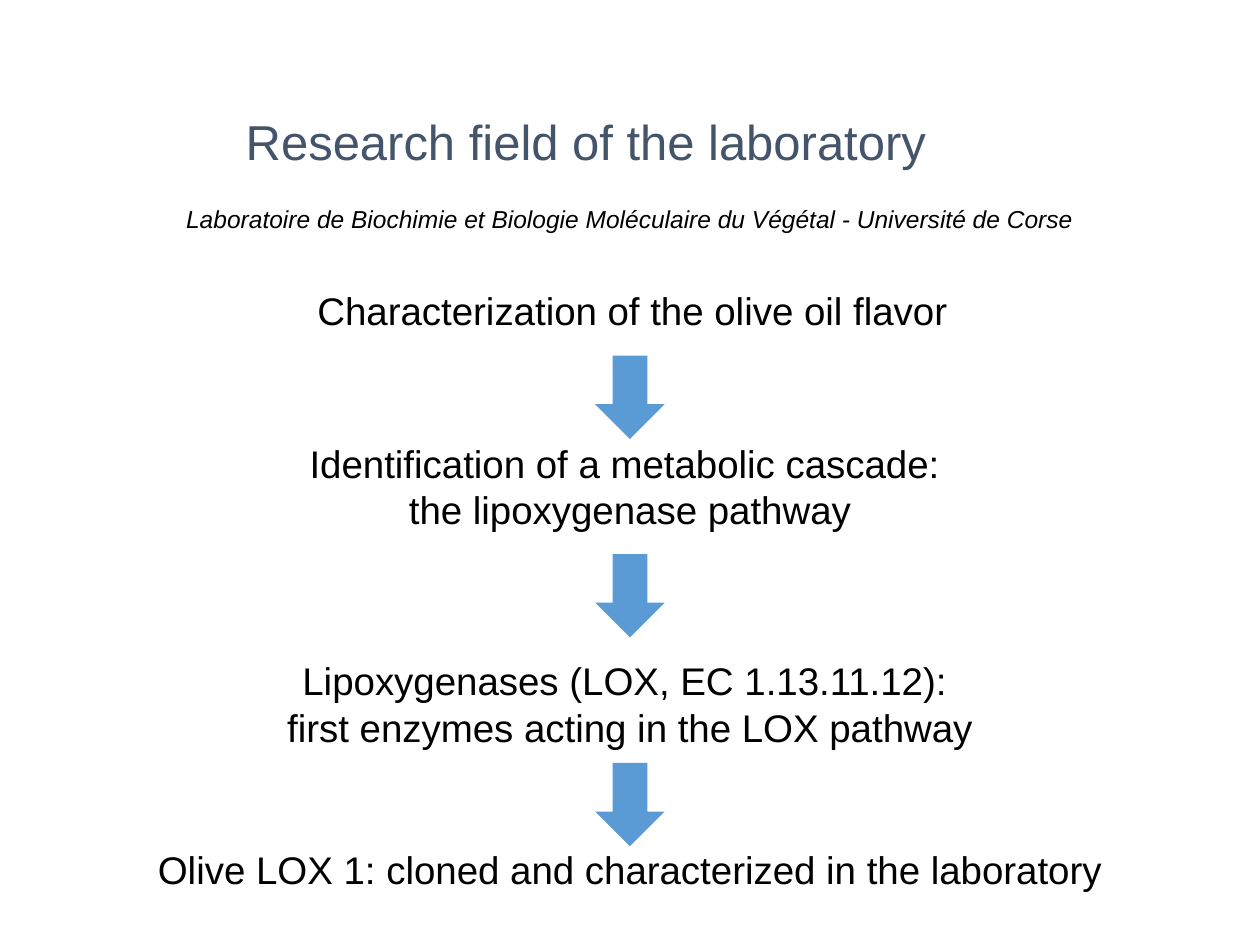
from pptx import Presentation
from pptx.dml.color import RGBColor
from pptx.enum.shapes import MSO_SHAPE as Shape
from pptx.enum.text import MSO_ANCHOR as Anchor, MSO_AUTO_SIZE as AutoSize, PP_ALIGN as Align
from pptx.util import Cm, Pt


def color(hex_text):
    return RGBColor.from_string(hex_text)


def write(frame, text, size=22, ink="000000", italic=False, align=Align.CENTER,
          line_spacing=None, wrap=True):
    frame.word_wrap = wrap
    frame.auto_size = AutoSize.NONE
    frame.vertical_anchor = Anchor.TOP
    frame.text = text
    for line in frame.paragraphs:
        line.alignment = align
        line.line_spacing = line_spacing
        font = line.runs[0].font
        font.name, font.size, font.italic = "Arial", Pt(size), italic
        font.color.rgb = color(ink)


prs = Presentation()
prs.slide_width, prs.slide_height = Cm(25.4), Cm(19.05)
slide = prs.slides.add_slide(prs.slide_layouts[5])

# Title
title = slide.shapes.title
title.left, title.top, title.width, title.height = Cm(4.7), Cm(2.13), Cm(20.3), Cm(1.45)
write(title.text_frame, "Research field of the laboratory", size=28, ink="44546A",
      align=Align.LEFT)

# Laboratory name
laboratory = slide.shapes.add_textbox(0, Cm(4.11), prs.slide_width, Cm(0.74))
write(laboratory.text_frame,
      "Laboratoire de Biochimie et Biologie Moléculaire du Végétal - Université de Corse",
      size=14, italic=True, line_spacing=0.8)

# Research steps: left, top, width, height in cm, text
steps = [
    (6.12, 5.66, 13.26, 1.19, "Characterization of the olive oil flavor"),
    (1.1, 8.74, 23.2, 2.11,
     "Identification of a metabolic cascade: \nthe lipoxygenase pathway"),
    (1.5, 13.13, 22.4, 2.11,
     "Lipoxygenases (LOX, EC 1.13.11.12): \nfirst enzymes acting in the LOX pathway"),
    (1.5, 16.94, 22.4, 1.19, "Olive LOX 1: cloned and characterized in the laboratory"),
]
for left, top, width, height, text in steps:
    step = slide.shapes.add_textbox(Cm(left), Cm(top), Cm(width), Cm(height))
    write(step.text_frame, text, wrap="\n" in text or width > 20)

# Arrows between the steps
arrow_width = Cm(1.4)
for top in (7.17, 11.17, 15.38):
    arrow = slide.shapes.add_shape(Shape.DOWN_ARROW, (prs.slide_width - arrow_width) // 2,
                                   Cm(top), arrow_width, Cm(1.68))
    arrow.shadow.inherit = False
    arrow.fill.solid()
    arrow.fill.fore_color.rgb = color("5B9BD5")
    arrow.line.fill.background()

prs.save("out.pptx")
